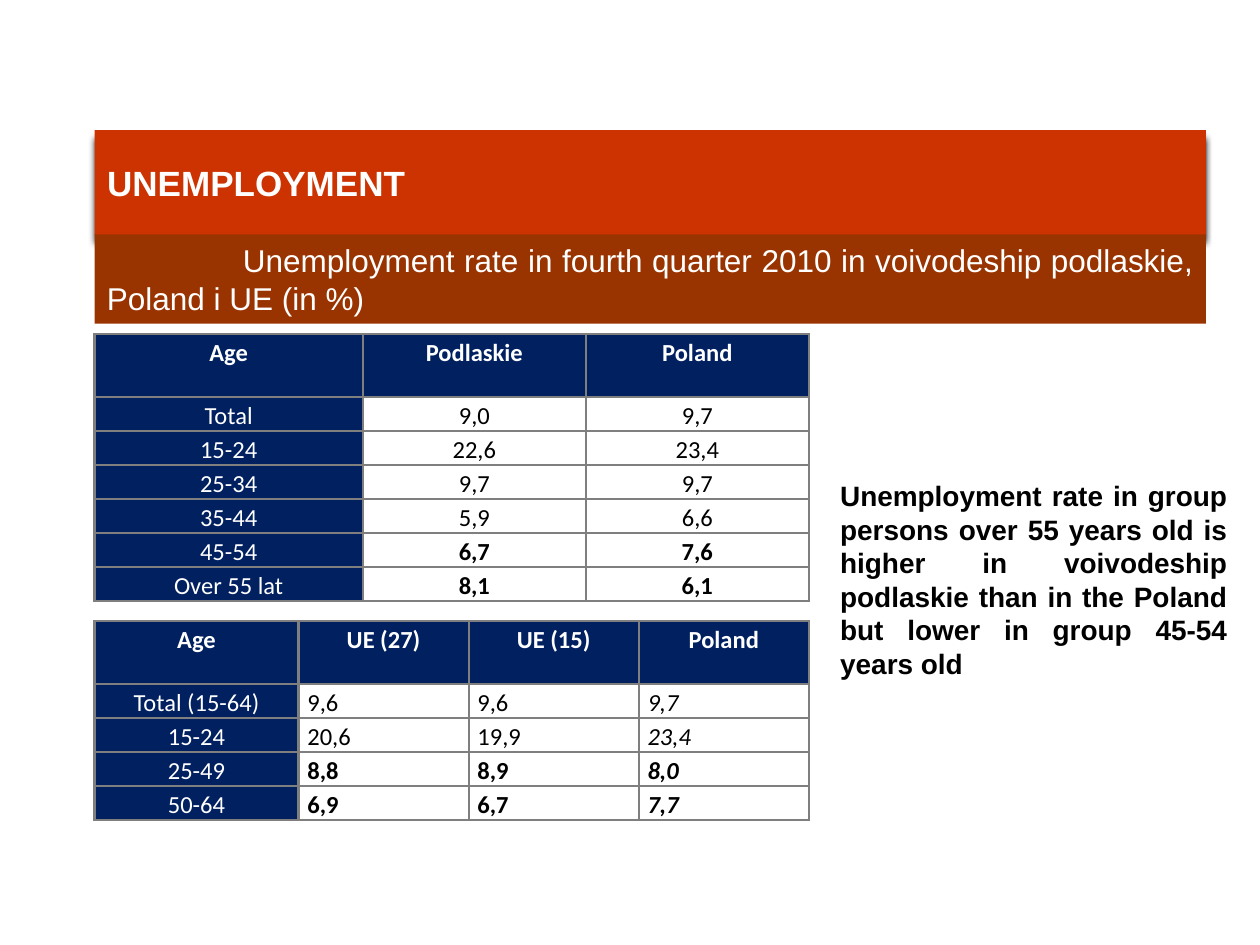
from lxml import etree
from pptx import Presentation
from pptx import util as u
from pptx.dml.color import RGBColor
from pptx.enum import shapes, text
from pptx.oxml import ns

WHITE = RGBColor(0xFF, 0xFF, 0xFF)
BLACK = RGBColor(0, 0, 0)
RED = RGBColor(0xCC, 0x33, 0x00)
BROWN = RGBColor(0x99, 0x33, 0x00)
NAVY = RGBColor(0x00, 0x20, 0x60)
GREY = RGBColor(0x7F, 0x7F, 0x7F)

LEFT = 0.75
BAND_WIDTH = 8.82
HEADER_HEIGHT = 0.5
ROW_HEIGHT = 0.27
CENTER = text.PP_ALIGN.CENTER
JUSTIFY = text.PP_ALIGN.JUSTIFY


class SlideBuilder:
    body_font = "Arial"
    table_font = "Calibri"

    def __init__(self, slide):
        self.slide = slide

    def set_text(self, frame, wording, size, color, bold=False, italic=False,
                 align=JUSTIFY, font=body_font):
        frame.text = wording
        paragraph = frame.paragraphs[0]
        paragraph.alignment = align
        for run in paragraph.runs:
            run.font.name = font
            run.font.size = u.Pt(size)
            run.font.bold = bold
            run.font.italic = italic
            run.font.color.rgb = color
        return paragraph

    def place(self, shape, left, top, width, height):
        shape.left, shape.top = u.Inches(left), u.Inches(top)
        shape.width, shape.height = u.Inches(width), u.Inches(height)
        shape.text_frame.word_wrap = True
        shape.text_frame.auto_size = text.MSO_AUTO_SIZE.SHAPE_TO_FIT_TEXT

    def title(self, wording, top, height):
        heading = self.slide.shapes.title
        self.place(heading, LEFT, top, BAND_WIDTH, height)
        heading.fill.solid()
        heading.fill.fore_color.rgb = RED
        self.set_text(heading.text_frame, wording, 20, WHITE, bold=True)
        effects = etree.SubElement(heading._element.spPr, ns.qn("a:effectLst"))
        shadow = etree.SubElement(
            effects, ns.qn("a:outerShdw"), blurRad=str(u.Pt(4)),
            dist=str(u.Pt(4)), dir="5400000", algn="ctr", rotWithShape="0")
        etree.SubElement(shadow, ns.qn("a:srgbClr"), val=str(BLACK))

    def band(self, wording, top, height, first_indent):
        subtitle = self.slide.shapes.add_shape(
            shapes.MSO_SHAPE.RECTANGLE, 0, 0, 0, 0)
        subtitle.shadow.inherit = False
        self.place(subtitle, LEFT, top, BAND_WIDTH, height)
        subtitle.fill.solid()
        subtitle.fill.fore_color.rgb = BROWN
        subtitle.line.fill.background()
        paragraph = self.set_text(subtitle.text_frame, wording, 18, WHITE)
        paragraph._p.get_or_add_pPr().set("indent", str(u.Inches(first_indent)))

    def note(self, wording, left, top, width, height):
        comment = self.slide.shapes.add_textbox(0, 0, 0, 0)
        self.place(comment, left, top, width, height)
        self.set_text(comment.text_frame, wording, 16, BLACK, bold=True)

    def border(self, cell):
        properties = cell._tc.get_or_add_tcPr()
        for index, side in enumerate(("a:lnL", "a:lnR", "a:lnT", "a:lnB")):
            edge = etree.Element(ns.qn(side), w=str(u.Pt(1.5)))
            fill = etree.SubElement(edge, ns.qn("a:solidFill"))
            etree.SubElement(fill, ns.qn("a:srgbClr"), val=str(GREY))
            properties.insert(index, edge)

    def table(self, rows, top, widths, value_align, italic_column=None):
        height = HEADER_HEIGHT + ROW_HEIGHT * (len(rows) - 1)
        rates = self.slide.shapes.add_table(
            len(rows), len(widths), u.Inches(LEFT), u.Inches(top),
            u.Inches(sum(widths)), u.Inches(height)).table
        rates.first_row = rates.horz_banding = False
        for column, width in zip(rates.columns, widths):
            column.width = u.Inches(width)
        for r, values in enumerate(rows):
            rates.rows[r].height = u.Inches(ROW_HEIGHT if r else HEADER_HEIGHT)
            for c, value in enumerate(values):
                cell = rates.cell(r, c)
                is_label = r == 0 or c == 0
                cell.margin_left = cell.margin_right = u.Inches(0.07)
                cell.margin_top = cell.margin_bottom = 0
                if is_label:
                    cell.fill.solid()
                    cell.fill.fore_color.rgb = NAVY
                else:
                    cell.fill.background()
                    if c == 2:
                        cell.vertical_anchor = text.MSO_ANCHOR.BOTTOM
                emphasised = r == 0 or (c > 0 and r >= len(rows) - 2)
                paragraph = self.set_text(
                    cell.text_frame, value, 14, WHITE if is_label else BLACK,
                    bold=emphasised, italic=r > 0 and c == italic_column,
                    align=CENTER if is_label else value_align,
                    font=self.table_font)
                paragraph.line_spacing = 1.15
                self.border(cell)


def main():
    deck = Presentation()
    deck.slide_width, deck.slide_height = u.Inches(10), u.Inches(7.5)
    builder = SlideBuilder(deck.slides.add_slide(deck.slide_layouts[5]))

    builder.title("UNEMPLOYMENT", 1.23, 0.44)
    builder.band("Unemployment rate in fourth quarter 2010 in voivodeship "
                 "podlaskie, Poland i UE (in %)", 1.86, 0.71, 1.08)
    builder.table([
        ("Age", "Podlaskie", "Poland"),
        ("Total", "9,0", "9,7"),
        ("15-24", "22,6", "23,4"),
        ("25-34", "9,7", "9,7"),
        ("35-44", "5,9", "6,6"),
        ("45-54", "6,7", "7,6"),
        ("Over 55 lat", "8,1", "6,1"),
    ], 2.65, (2.13, 1.77, 1.77), CENTER)
    builder.table([
        ("Age", "UE (27)", "UE (15)", "Poland"),
        ("Total (15-64)", "9,6", "9,6", "9,7"),
        ("15-24", "20,6", "19,9", "23,4"),
        ("25-49", "8,8", "8,9", "8,0"),
        ("50-64", "6,9", "6,7", "7,7"),
    ], 4.93, (1.62, 1.35, 1.35, 1.35), JUSTIFY, italic_column=3)
    builder.note("Unemployment rate in group persons over 55 years old is "
                 "higher in voivodeship podlaskie than in the Poland but "
                 "lower in group 45-54 years old", 6.57, 3.75, 3.27, 2.24)
    deck.save("out.pptx")


if __name__ == "__main__":
    main()
